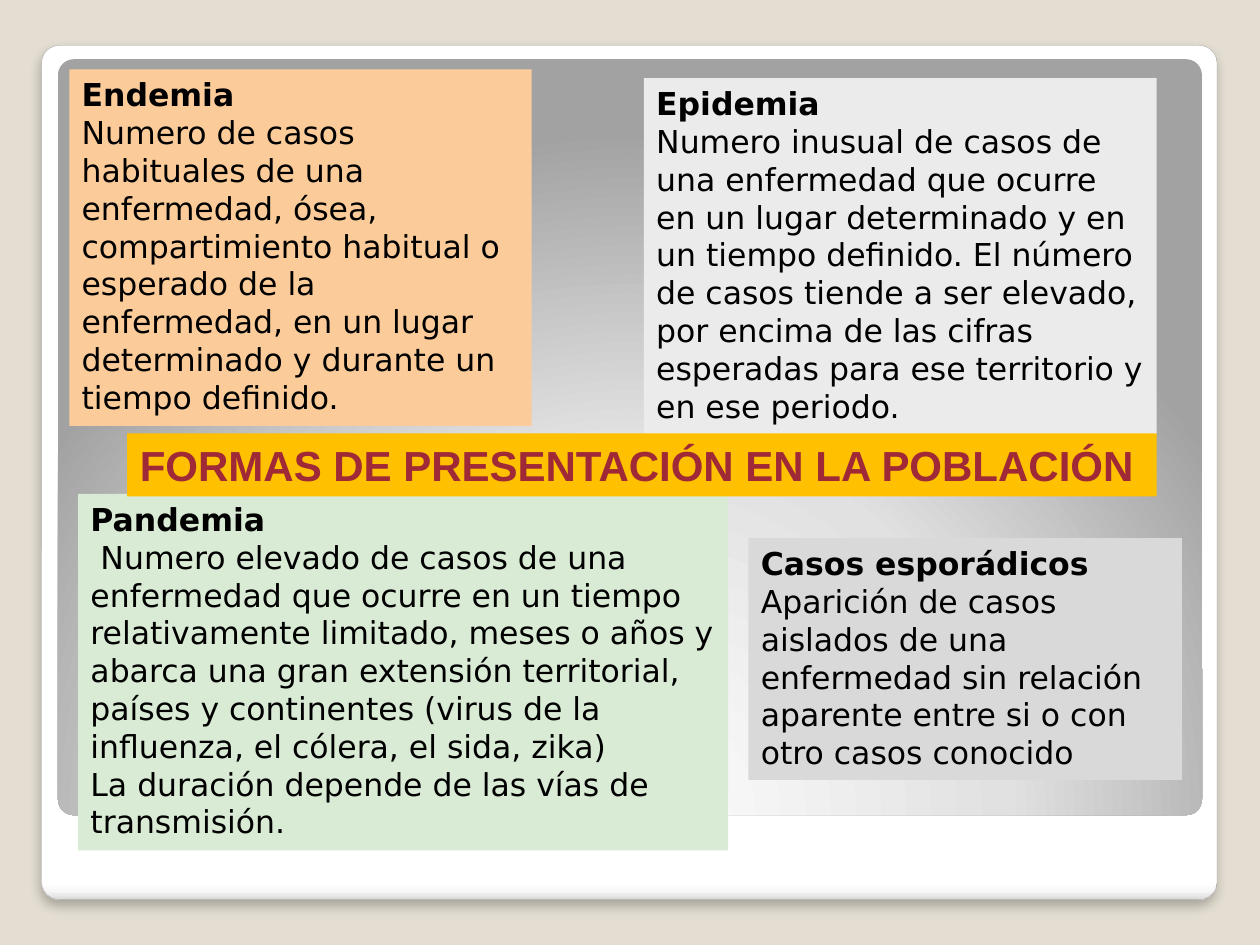
from dataclasses import dataclass

from lxml import etree
from pptx import Presentation
from pptx.dml.color import RGBColor
from pptx.enum.shapes import MSO_SHAPE
from pptx.enum.text import MSO_ANCHOR, MSO_AUTO_SIZE, PP_ALIGN
from pptx.oxml import parse_xml
from pptx.oxml.ns import nsdecls, qn
from pptx.util import Inches, Pt

ROUND, RECT = MSO_SHAPE.ROUNDED_RECTANGLE, MSO_SHAPE.RECTANGLE
LEFT, TOP = PP_ALIGN.LEFT, MSO_ANCHOR.TOP
GROW, FIXED = MSO_AUTO_SIZE.SHAPE_TO_FIT_TEXT, MSO_AUTO_SIZE.NONE
TITLE_ONLY = 5


@dataclass(frozen=True)
class Theme:
    background: str = "E3DED1"
    frame_line: str = "A4A4A4"
    shadow: str = "000000"
    text: str = "000000"
    banner: str = "FFC000"
    banner_text: str = "9F2936"
    body_font: str = "DejaVu Sans"
    title_font: str = "Arial"
    body_size: int = 18
    title_size: int = 24


THEME = Theme()
FRAME_STOPS = [(0, "FFFFFF"), (98, "FFFFFF"), (99, "F7F7F7"), (100, "DADADA")]
PANEL_STOPS = [(0, "FFFFFF"), (55, "E1E1E1"), (100, "A2A2A2")]
LINEAR_DOWN = '<a:lin ang="5400000" scaled="0"/>'
GLOW_FROM_BELOW = ('<a:path path="circle"><a:fillToRect l="50000" t="175000" '
                   'r="50000" b="-75000"/></a:path>')

# Each card: box, fill, paragraphs made of (text, bold) runs
CARDS = [
    ((0.55, 0.55, 3.67, 2.83), "FBCC9A", [
        [("Endemia", True)],
        [("Numero de casos habituales de una enfermedad, ósea, compartimiento "
          "habitual o esperado de la enfermedad, en un lugar determinado y "
          "durante un tiempo definido.", False)]]),
    ((5.11, 0.62, 4.07, 2.83), "EBEBEB", [
        [("Epidemia", True)],
        [("Numero inusual de casos de una enfermedad que ocurre en un lugar "
          "determinado y en un tiempo definido. El número de casos tiende a "
          "ser elevado, por encima de las cifras esperadas para ese "
          "territorio y en ese periodo.", False)]]),
    ((0.62, 3.92, 5.16, 2.83), "D9EAD5", [
        [("Pandemia", True)],
        [(" Numero elevado de casos de una enfermedad que ocurre en un tiempo "
          "relativamente limitado, meses o años y abarca una gran extensión "
          "territorial, países y continentes (virus de la influenza, el "
          "cólera, el sida, zika)", False)],
        [("La duración depende de las vías de transmisión.", False)]]),
    ((5.94, 4.27, 3.44, 1.92), "D9D9D9", [
        [("Casos esporádicos ", True),
         ("Aparición de casos aislados de una enfermedad sin relación "
          "aparente entre si o con otro casos conocido", False)]]),
]


def rgb(value):
    return RGBColor.from_string(value)


def set_gradient(s, stops, direction):
    """Replace the fill with a gradient of (percent, colour) stops."""
    s.fill.background()
    marks = "".join(f'<a:gs pos="{pos * 1000}"><a:srgbClr val="{color}"/></a:gs>'
                    for pos, color in stops)
    grad = parse_xml(f'<a:gradFill {nsdecls("a")} rotWithShape="1">'
                     f'<a:gsLst>{marks}</a:gsLst>{direction}</a:gradFill>')
    sp_pr = s.element.spPr
    sp_pr.replace(sp_pr.find(qn("a:noFill")), grad)


def add_shadow(s, blur, distance, alpha):
    """Cast a soft shadow straight down."""
    effects = s.element.spPr.find(qn("a:effectLst"))
    shadow = etree.SubElement(effects, qn("a:outerShdw"), blurRad=str(Pt(blur)),
                              dist=str(Pt(distance)), dir="5400000",
                              algn="t", rotWithShape="0")
    color = etree.SubElement(shadow, qn("a:srgbClr"), val=THEME.shadow)
    etree.SubElement(color, qn("a:alpha"), val=str(alpha * 1000))


def add_box(slide, kind, box):
    s = slide.shapes.add_shape(kind, *map(Inches, box))
    s.shadow.inherit = False
    s.line.fill.background()
    return s


def add_rounded(slide, box, stops, direction):
    s = add_box(slide, ROUND, box)
    s.adjustments[0] = 0.021
    set_gradient(s, stops, direction)
    return s


def write_text(s, paragraphs, auto_size, font, size, color):
    tf = s.text_frame
    frame_format = {"word_wrap": True, "auto_size": auto_size, "vertical_anchor": TOP,
                    "margin_left": Inches(0.1), "margin_right": Inches(0.1),
                    "margin_top": Inches(0.05), "margin_bottom": Inches(0.05)}
    for name, value in frame_format.items():
        setattr(tf, name, value)
    for i, runs in enumerate(paragraphs):
        p = tf.add_paragraph() if i else tf.paragraphs[0]
        p.alignment = LEFT
        for text, bold in runs:
            r = p.add_run()
            r.text = text
            r.font.color.rgb = rgb(color)
            for name, value in {"name": font, "size": Pt(size), "bold": bold}.items():
                setattr(r.font, name, value)


def add_card(slide, box, fill, paragraphs):
    s = add_box(slide, RECT, box)
    s.fill.solid()
    s.fill.fore_color.rgb = rgb(fill)
    write_text(s, paragraphs, GROW, THEME.body_font, THEME.body_size, THEME.text)


def place_title(slide, box, text):
    title = slide.shapes.title
    for name, value in zip(("left", "top", "width", "height"), box):
        setattr(title, name, Inches(value))
    title.fill.solid()
    title.fill.fore_color.rgb = rgb(THEME.banner)
    write_text(title, [[(text, True)]], FIXED, THEME.title_font,
               THEME.title_size, THEME.banner_text)
    # The banner lies over the cards
    title.element.getparent().append(title.element)


def main():
    prs = Presentation()
    prs.slide_width, prs.slide_height = Inches(10), Inches(7.5)
    slide = prs.slides.add_slide(prs.slide_layouts[TITLE_ONLY])
    slide.background.fill.solid()
    slide.background.fill.fore_color.rgb = rgb(THEME.background)

    # White frame and grey panel behind the cards
    frame = add_rounded(slide, (0.33, 0.36, 9.33, 6.78), FRAME_STOPS, LINEAR_DOWN)
    frame.line.color.rgb = rgb(THEME.frame_line)
    frame.line.width = Pt(0.16)
    add_shadow(frame, blur=6, distance=4, alpha=25)
    add_rounded(slide, (0.46, 0.47, 9.08, 6), PANEL_STOPS, GLOW_FROM_BELOW)

    # Definitions and central banner
    for card in CARDS:
        add_card(slide, *card)
    place_title(slide, (1.01, 3.44, 8.17, 0.5),
                "FORMAS DE PRESENTACIÓN EN LA POBLACIÓN")
    prs.save("out.pptx")


if __name__ == "__main__":
    main()
